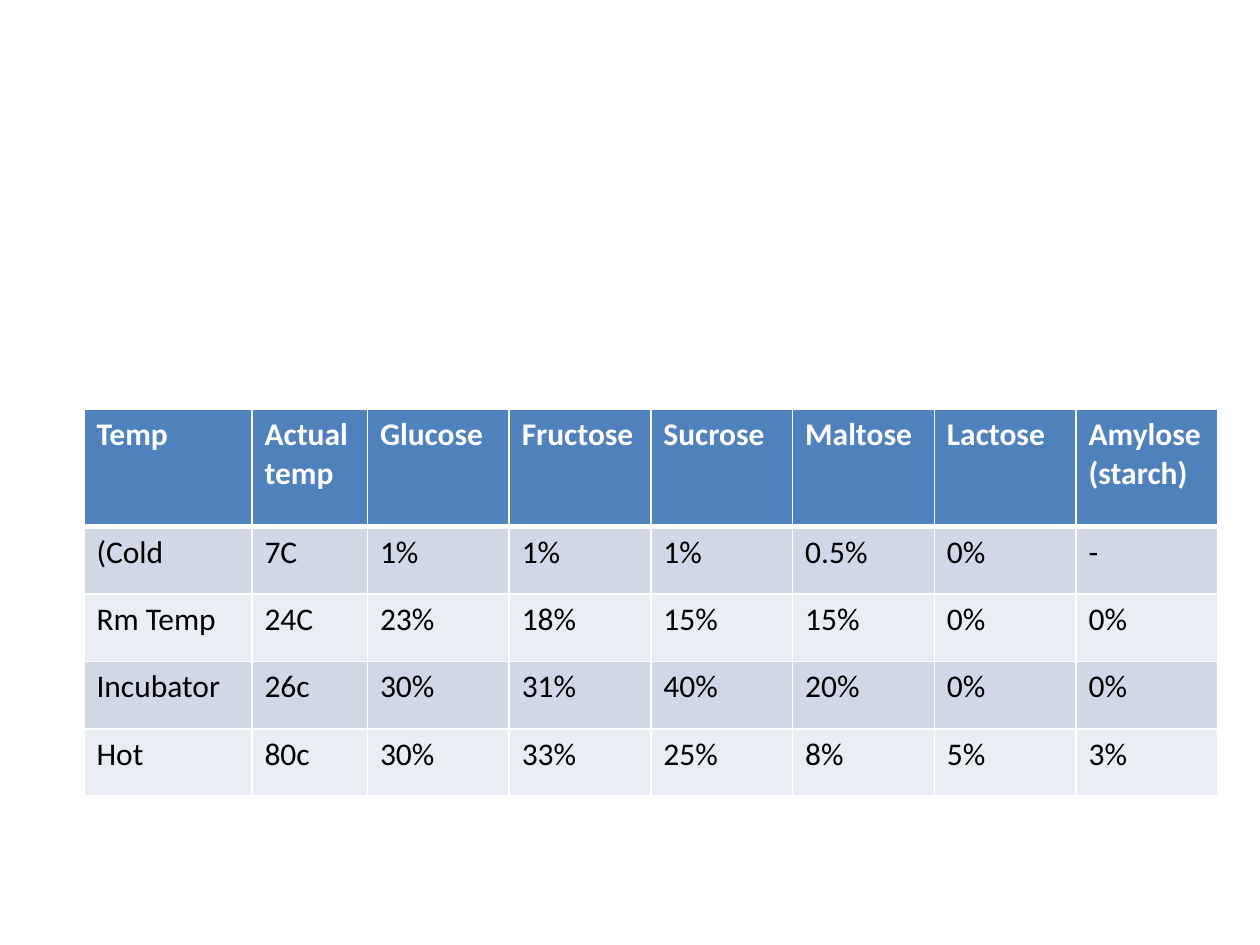
import pptx
import pptx.dml.color
import pptx.oxml
import pptx.oxml.ns
import pptx.util

Pt = pptx.util.Pt

# Results by temperature; the first row is the header
RESULTS = [
    ["Temp", "Actual temp", "Glucose", "Fructose", "Sucrose", "Maltose", "Lactose", "Amylose (starch)"],
    ["(Cold", "7C", "1%", "1%", "1%", "0.5%", "0%", "-"],
    ["Rm Temp", "24C", "23%", "18%", "15%", "15%", "0%", "0%"],
    ["Incubator", "26c", "30%", "31%", "40%", "20%", "0%", "0%"],
    ["Hot", "80c", "30%", "33%", "25%", "8%", "5%", "3%"],
]
COLUMN_WIDTHS = [96, 66] + [81] * 6
ROW_HEIGHTS = [67] + [38.5] * 4


def color(hex_string):
    return pptx.dml.color.RGBColor.from_string(hex_string)


class SlideBuilder:
    font_name = "Calibri"
    font_size = 18
    header_fill = "4F81BD"
    band_fills = ("E9EDF4", "D0D8E8")
    header_text = border_color = "FFFFFF"
    body_text = "000000"

    def __init__(self, slide):
        self.slide = slide

    def add_borders(self, cell, widths):
        properties = cell._tc.get_or_add_tcPr()
        for side, width in widths.items():
            properties.append(pptx.oxml.parse_xml(
                f'<a:ln{side} {pptx.oxml.ns.nsdecls("a")} w="{Pt(width)}"><a:solidFill>'
                f'<a:srgbClr val="{self.border_color}"/></a:solidFill></a:ln{side}>'))

    def style_cell(self, cell, text, row):
        is_header = row == 0
        # Borders come before the fill in the cell properties
        self.add_borders(cell, {"L": 1, "R": 1, "T": 3 if row == 1 else 1, "B": 3 if is_header else 1})
        cell.fill.solid()
        cell.fill.fore_color.rgb = color(self.header_fill if is_header else self.band_fills[row % 2])
        cell.text = text
        font = cell.text_frame.paragraphs[0].font
        font.name = self.font_name
        font.size = Pt(self.font_size)
        font.bold = is_header
        font.color.rgb = color(self.header_text if is_header else self.body_text)

    def add_table(self, left, top, rows, column_widths, row_heights):
        table = self.slide.shapes.add_table(
            len(rows), len(column_widths), Pt(left), Pt(top),
            Pt(sum(column_widths)), Pt(sum(row_heights))).table
        for column, width in zip(table.columns, column_widths):
            column.width = Pt(width)
        for row, height in zip(table.rows, row_heights):
            row.height = Pt(height)
        for row_index, texts in enumerate(rows):
            for column_index, text in enumerate(texts):
                self.style_cell(table.cell(row_index, column_index), text, row_index)


def main():
    presentation = pptx.Presentation()
    presentation.slide_width = Pt(720)
    presentation.slide_height = Pt(540)

    # Blank layout: the slide holds only the table
    slide = presentation.slides.add_slide(presentation.slide_layouts[6])
    builder = SlideBuilder(slide)
    builder.add_table(48, 234, RESULTS, COLUMN_WIDTHS, ROW_HEIGHTS)

    presentation.save("out.pptx")


if __name__ == "__main__":
    main()
